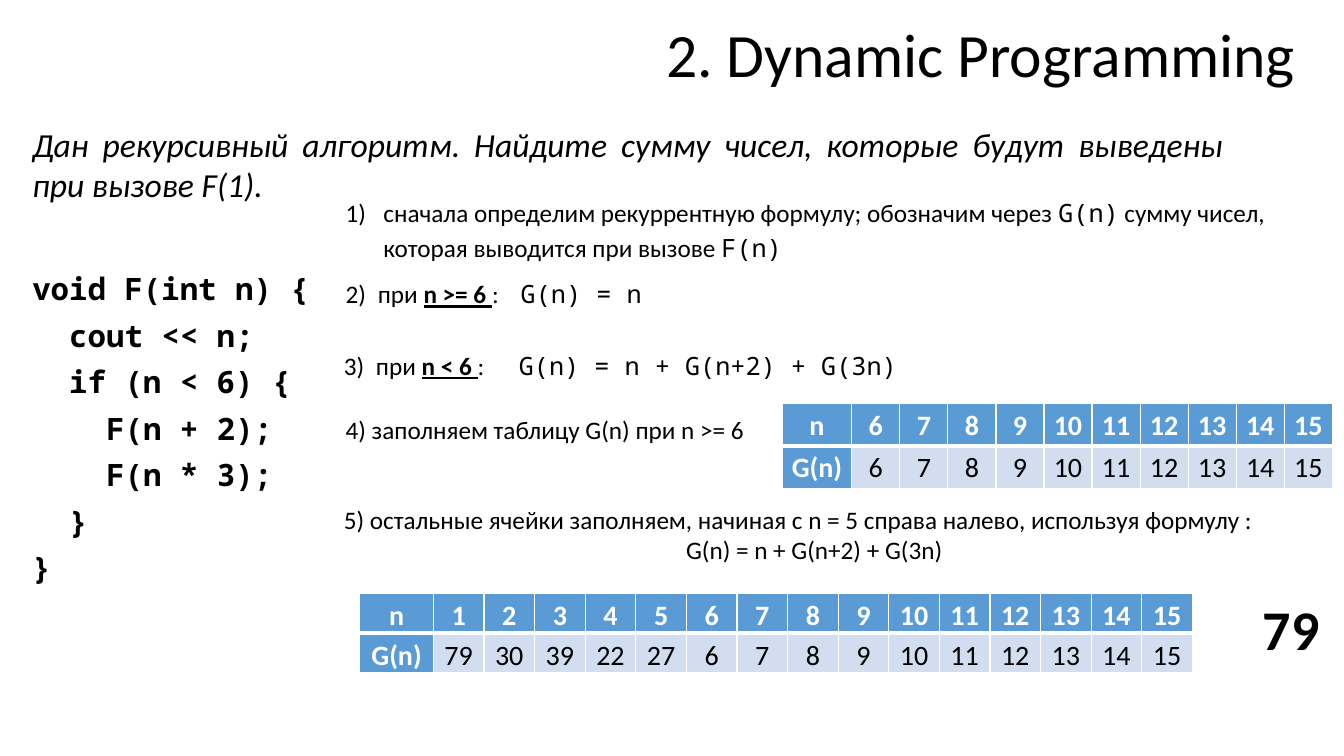
from dataclasses import dataclass

from lxml import etree
from pptx import Presentation
from pptx.dml.color import RGBColor
from pptx.enum.text import MSO_ANCHOR, PP_ALIGN
from pptx.oxml.ns import qn
from pptx.util import Pt

LEFT, CENTER, JUSTIFY = PP_ALIGN.LEFT, PP_ALIGN.CENTER, PP_ALIGN.JUSTIFY
TOP, MIDDLE = MSO_ANCHOR.TOP, MSO_ANCHOR.MIDDLE
BLACK = RGBColor(0x00, 0x00, 0x00)
WHITE = RGBColor(0xFF, 0xFF, 0xFF)
HEADER_BLUE = RGBColor(0x5B, 0x9B, 0xD5)
PALE_BLUE = RGBColor(0xD2, 0xDE, 0xEF)
SANS, MONO = "Calibri", "Noto Sans Mono"
TITLE_ONLY = 5
CODE_INDENT = 26.4
STEP_TABS = (23, 125)


@dataclass(frozen=True)
class Span:
    text: str
    font: str = SANS
    bold: bool = False
    italic: bool = False
    underline: bool = False


@dataclass(frozen=True)
class Line:
    spans: tuple[Span, ...]
    indent: float = 0
    numbered: bool = False
    tabs: tuple[float, ...] = ()


@dataclass(frozen=True)
class Block:
    left: float
    top: float
    width: float
    height: float
    size: float
    lines: tuple[Line, ...]
    spacing: float = 1.0
    before: float = 0
    align: PP_ALIGN = LEFT
    anchor: MSO_ANCHOR = TOP
    wrap: bool = True


@dataclass(frozen=True)
class ValueTable:
    left: float
    top: float
    label_width: float
    value_width: float
    row_height: float
    first_n: int


def printed_sum(n: int) -> int:
    """G(n): the sum of the numbers printed by F(n)."""
    return n if n >= 6 else n + printed_sum(n + 2) + printed_sum(3 * n)


def code_line(level: int, code: str) -> Line:
    return Line((Span(code, MONO, bold=True),), indent=level * CODE_INDENT)


def case_line(number: int, condition: str, formula: str) -> Line:
    return Line((Span(f"{number})\tпри "), Span(condition, bold=True, underline=True),
                 Span(":\t"), Span(formula, MONO)), tabs=STEP_TABS)


def style_font(font, name: str, size: float, color: RGBColor, bold: bool = False) -> None:
    font.name, font.size, font.bold = name, Pt(size), bold
    font.color.rgb = color


def format_indent(paragraph, line: Line) -> None:
    properties = paragraph._p.get_or_add_pPr()
    if line.indent:
        properties.set("marL", str(Pt(line.indent)))
    if line.numbered:
        properties.set("indent", str(-Pt(line.indent)))
        etree.SubElement(properties, qn("a:buAutoNum"), type="arabicParenR")
    if line.tabs:
        stops = etree.SubElement(properties, qn("a:tabLst"))
        for position in line.tabs:
            etree.SubElement(stops, qn("a:tab"), pos=str(Pt(position)), algn="l")


def draw_block(slide, block: Block) -> None:
    box = slide.shapes.add_textbox(Pt(block.left), Pt(block.top), Pt(block.width), Pt(block.height))
    frame = box.text_frame
    frame.word_wrap, frame.vertical_anchor = block.wrap, block.anchor
    for index, line in enumerate(block.lines):
        paragraph = frame.add_paragraph() if index else frame.paragraphs[0]
        paragraph.alignment = block.align
        paragraph.line_spacing = block.spacing
        paragraph.space_before = Pt(block.before)
        format_indent(paragraph, line)
        for span in line.spans:
            run = paragraph.add_run()
            run.text = span.text
            style_font(run.font, span.font, block.size, BLACK, span.bold)
            run.font.italic, run.font.underline = span.italic, span.underline


def set_borders(cell, widths: dict[str, float]) -> None:
    """Add white borders ahead of the cell's fill, as the schema orders them."""
    properties = cell._tc.get_or_add_tcPr()
    for position, (side, width) in enumerate(widths.items()):
        border = etree.Element(qn(f"a:{side}"), w=str(Pt(width)))
        fill = etree.SubElement(border, qn("a:solidFill"))
        etree.SubElement(fill, qn("a:srgbClr"), val=str(WHITE))
        properties.insert(position, border)


def draw_table(slide, spec: ValueTable) -> None:
    arguments = range(spec.first_n, 16)
    rows = (["n", *arguments], ["G(n)", *map(printed_sum, arguments)])
    widths = [spec.label_width] + [spec.value_width] * len(arguments)
    table = slide.shapes.add_table(2, len(widths), Pt(spec.left), Pt(spec.top),
                                   Pt(sum(widths)), Pt(2 * spec.row_height)).table
    for column, width in zip(table.columns, widths):
        column.width = Pt(width)
    for r, values in enumerate(rows):
        table.rows[r].height = Pt(spec.row_height)
        for c, value in enumerate(values):
            cell = table.cell(r, c)
            header = r == 0 or c == 0
            cell.margin_left = cell.margin_right = Pt(5)
            cell.margin_top = cell.margin_bottom = 0
            cell.fill.solid()
            cell.fill.fore_color.rgb = HEADER_BLUE if header else PALE_BLUE
            set_borders(cell, {"lnL": 1, "lnR": 1, "lnT": 3 if r else 1, "lnB": 1 if r else 3})
            paragraph = cell.text_frame.paragraphs[0]
            paragraph.text = str(value)
            paragraph.alignment, paragraph.line_spacing = CENTER, 1.15
            style_font(paragraph.runs[0].font, SANS, 20, WHITE if header else BLACK, header)


def draw_title(slide) -> None:
    title = slide.shapes.title
    title.left, title.top, title.width, title.height = Pt(468.7), Pt(-10.8), Pt(669.6), Pt(104.4)
    title.text_frame.text = "2. Dynamic Programming"
    title.text_frame.vertical_anchor = MIDDLE
    paragraph = title.text_frame.paragraphs[0]
    paragraph.alignment, paragraph.line_spacing = LEFT, 0.9
    style_font(paragraph.runs[0].font, SANS, 44, BLACK)


CODE = (
    code_line(0, "void F(int n) {"),
    code_line(1, "cout << n;"),
    code_line(1, "if (n < 6) {"),
    code_line(2, "F(n + 2);"),
    code_line(2, "F(n * 3);"),
    code_line(1, "}"),
    code_line(0, "}"),
)
TASK = Line((Span("Дан рекурсивный алгоритм. Найдите сумму чисел, которые будут "
                  "выведены при вызове F(1).", italic=True),))
DEFINE_G = Line((
    Span("сначала определим рекуррентную формулу; обозначим через "), Span("G(n)", MONO),
    Span(" сумму чисел, которая выводится при вызове "), Span("F(n)", MONO),
), indent=27, numbered=True)
FILL_REST = (
    Line((Span("5) остальные ячейки заполняем, начиная с n = 5 справа налево, используя формулу :"),)),
    Line((Span("G(n) = n + G(n+2) + G(3n)"),), indent=244.5),
)
BLOCKS = (
    Block(16, 192.2, 241, 269, 22, CODE, spacing=0.9, before=9.5),
    Block(16, 85, 864.7, 65.5, 24, (TASK,), align=JUSTIFY),
    Block(238.5, 356.4, 747.4, 51, 18, FILL_REST, anchor=MIDDLE),
    Block(239.8, 134, 729.4, 56, 18, (DEFINE_G,), spacing=1.15),
    Block(239.8, 292.3, 302.4, 29, 18,
          (Line((Span("4) заполняем таблицу G(n) при n >= 6"),)),), wrap=False),
    Block(895, 421.2, 57, 55.5, 40, (Line((Span(str(printed_sum(1)), bold=True),)),)),
    Block(239.8, 192.2, 747.4, 32.4, 18, (case_line(2, "n >= 6 ", "G(n) = n"),), spacing=1.15),
    Block(238.5, 243.4, 640.8, 32.4, 18,
          (case_line(3, "n < 6 ", "G(n) = n + G(n+2) + G(3n)"),), spacing=1.15),
)
TABLES = (
    ValueTable(558.7, 288, 49.7, 34.35, 30.5, first_n=6),
    ValueTable(257, 424.1, 52.6, 36.15, 27.7, first_n=1),
)


def main() -> None:
    deck = Presentation()
    deck.slide_width, deck.slide_height = Pt(960), Pt(540)
    slide = deck.slides.add_slide(deck.slide_layouts[TITLE_ONLY])
    draw_title(slide)
    for spec in TABLES:
        draw_table(slide, spec)
    for block in BLOCKS:
        draw_block(slide, block)
    deck.save("out.pptx")


if __name__ == "__main__":
    main()
